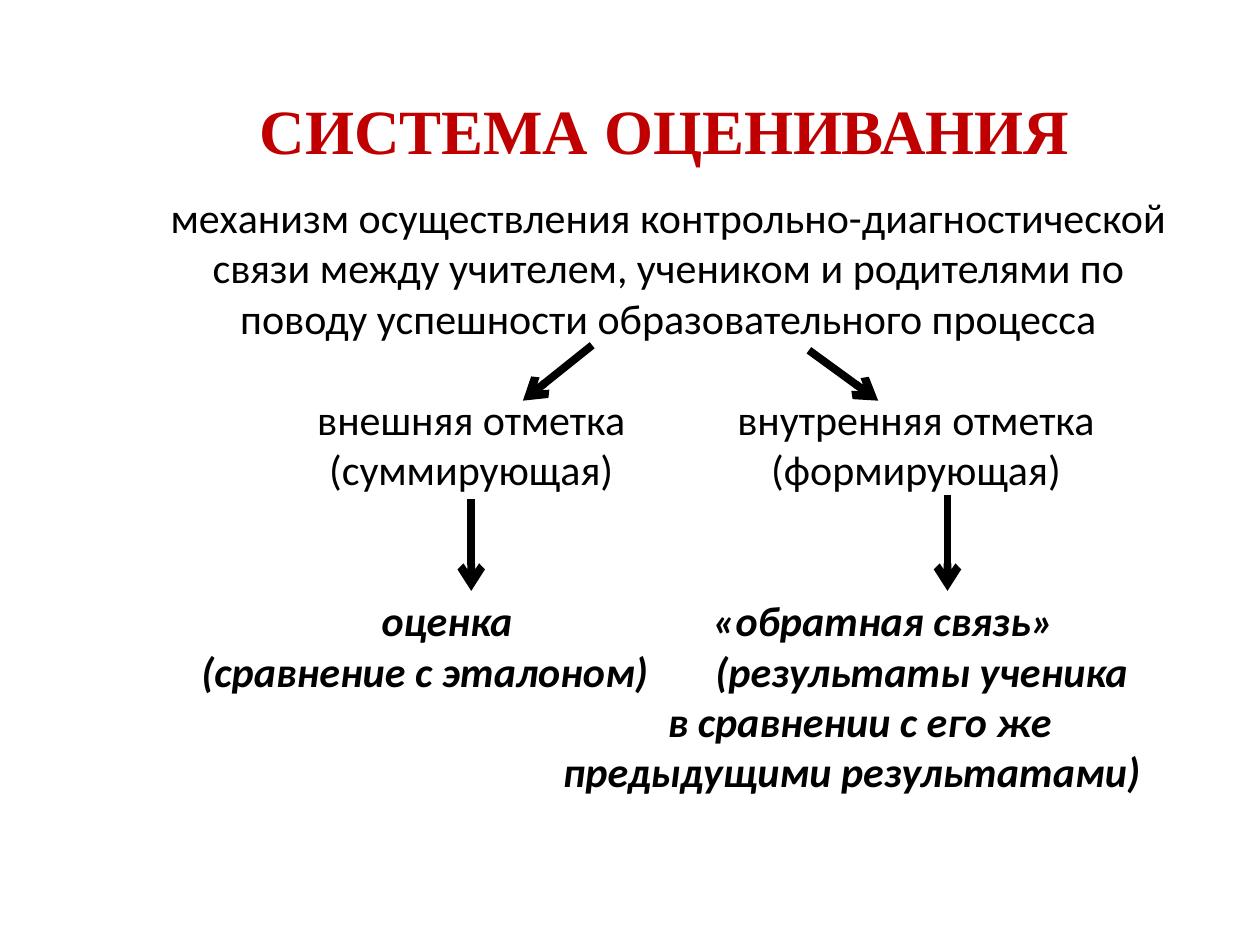
"""Build a slide about the assessment system and its two kinds of marks."""
from lxml import etree
from pptx import Presentation
from pptx.dml.color import RGBColor
from pptx.enum.shapes import MSO_CONNECTOR
from pptx.enum.text import PP_ALIGN
from pptx.oxml.ns import qn
from pptx.util import Inches, Pt

RED = RGBColor(0xC0, 0x00, 0x00)
BLACK = RGBColor(0x00, 0x00, 0x00)
CENTER, LEFT = PP_ALIGN.CENTER, PP_ALIGN.LEFT
STRAIGHT = MSO_CONNECTOR.STRAIGHT
TITLE = {"name": "Times New Roman", "size": Pt(36), "bold": True}
BODY = {"name": "Calibri", "size": Pt(24)}
RESULT = {**BODY, "bold": True, "italic": True}
BODY_TOP, LINE_STEP = 1.47, 0.4
MARKS_TOP = BODY_TOP + 4 * LINE_STEP
RESULTS_TOP = BODY_TOP + 8 * LINE_STEP


class SchemeSlide:
    def __init__(self, slide, line_color=BLACK, line_width=Pt(4.5)):
        self.slide = slide
        self.line_color = line_color
        self.line_width = line_width

    def text(self, box, lines, font, color=BLACK, align=CENTER, indents=None):
        label = self.slide.shapes.add_textbox(*map(Inches, box))
        frame = label.text_frame
        frame.word_wrap = True
        for index, line in enumerate(lines):
            paragraph = frame.paragraphs[0] if index == 0 else frame.add_paragraph()
            paragraph.alignment = align
            if indents:
                properties = paragraph._p.get_or_add_pPr()
                properties.set("marL", str(Inches(indents[index])))
            run = paragraph.add_run()
            run.text = line
            for key, value in font.items():
                setattr(run.font, key, value)
            run.font.color.rgb = color
        return label

    def arrow(self, start, end, source=None):
        link = self.slide.shapes.add_connector(
            STRAIGHT, *map(Inches, (*start, *end)))
        if source is not None:
            link.begin_connect(source, 2)
        link.line.color.rgb = self.line_color
        link.line.width = self.line_width
        outline = link.line._get_or_add_ln()
        etree.SubElement(outline, qn("a:tailEnd"), type="arrow")
        etree.SubElement(link._element.spPr, qn("a:effectLst"))


def main():
    deck = Presentation()
    deck.slide_width, deck.slide_height = Inches(10), Inches(7.5)
    scheme = SchemeSlide(deck.slides.add_slide(deck.slide_layouts[6]))

    scheme.text((1.22, 0.68, 8.11, 0.79), ["СИСТЕМА ОЦЕНИВАНИЯ"], TITLE, RED)
    scheme.text((1.2, BODY_TOP, 8.21, 1.3), [
        "механизм осуществления контрольно-диагностической связи между "
        "учителем, учеником и родителями по поводу успешности "
        "образовательного процесса"], BODY)

    external_mark, _ = [
        scheme.text((middle - 1.6, MARKS_TOP, 3.2, 0.89), lines, BODY)
        for middle, lines in (
            (3.74, ["внешняя отметка", "(суммирующая)"]),
            (7.27, ["внутренняя отметка", "(формирующая)"]))]

    scheme.text((1.5, RESULTS_TOP, 3.9, 0.89),
                ["оценка", "(сравнение с эталоном)"],
                RESULT, align=LEFT, indents=(1.43, 0))
    scheme.text((4.37, RESULTS_TOP, 5.04, 1.71),
                ["«обратная связь»", "(результаты ученика",
                 "в сравнении с его же", "предыдущими результатами)"],
                RESULT, align=LEFT, indents=(1.19, 1.21, 0.83, 0))

    scheme.arrow((4.7, 2.74), (4.15, 3.18))
    scheme.arrow((6.42, 2.78), (6.97, 3.18))
    scheme.arrow((3.74, 3.96), (3.74, 4.69), external_mark)
    scheme.arrow((7.52, 3.93), (7.52, 4.69))
    deck.save("out.pptx")


if __name__ == "__main__":
    main()
